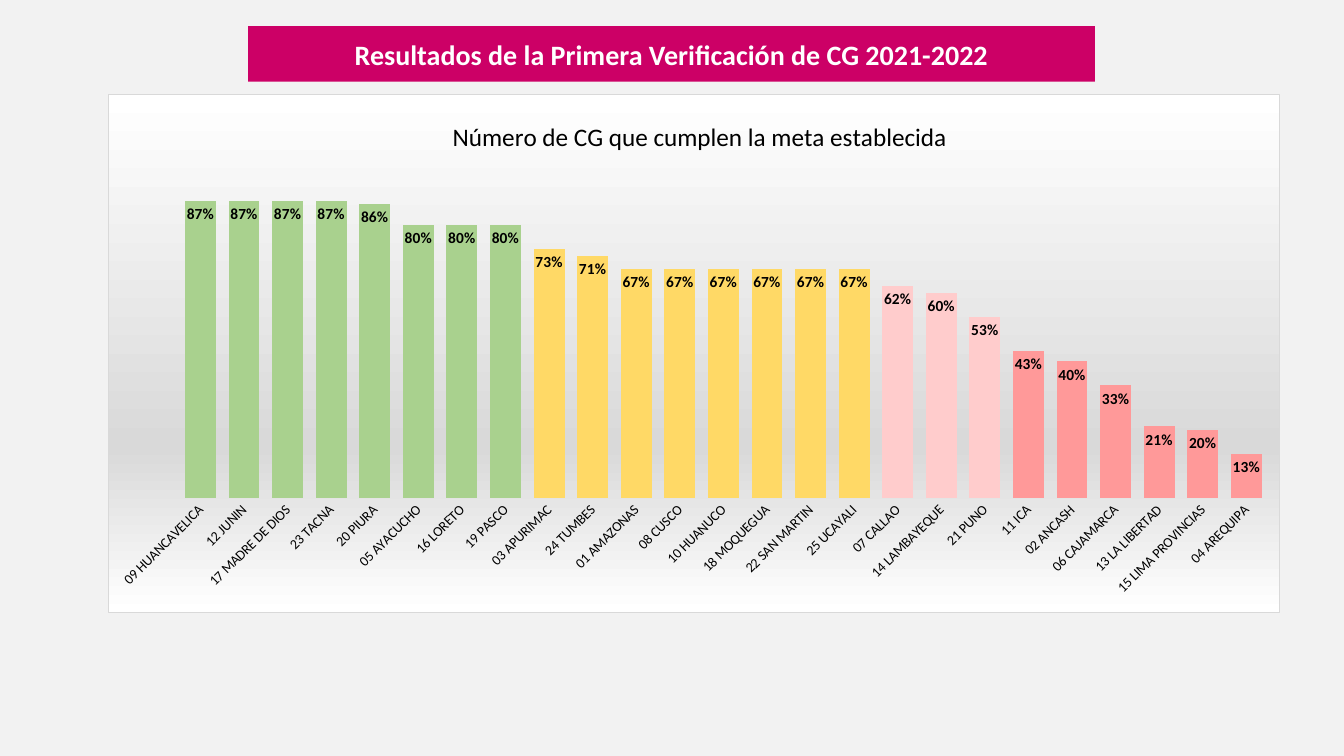
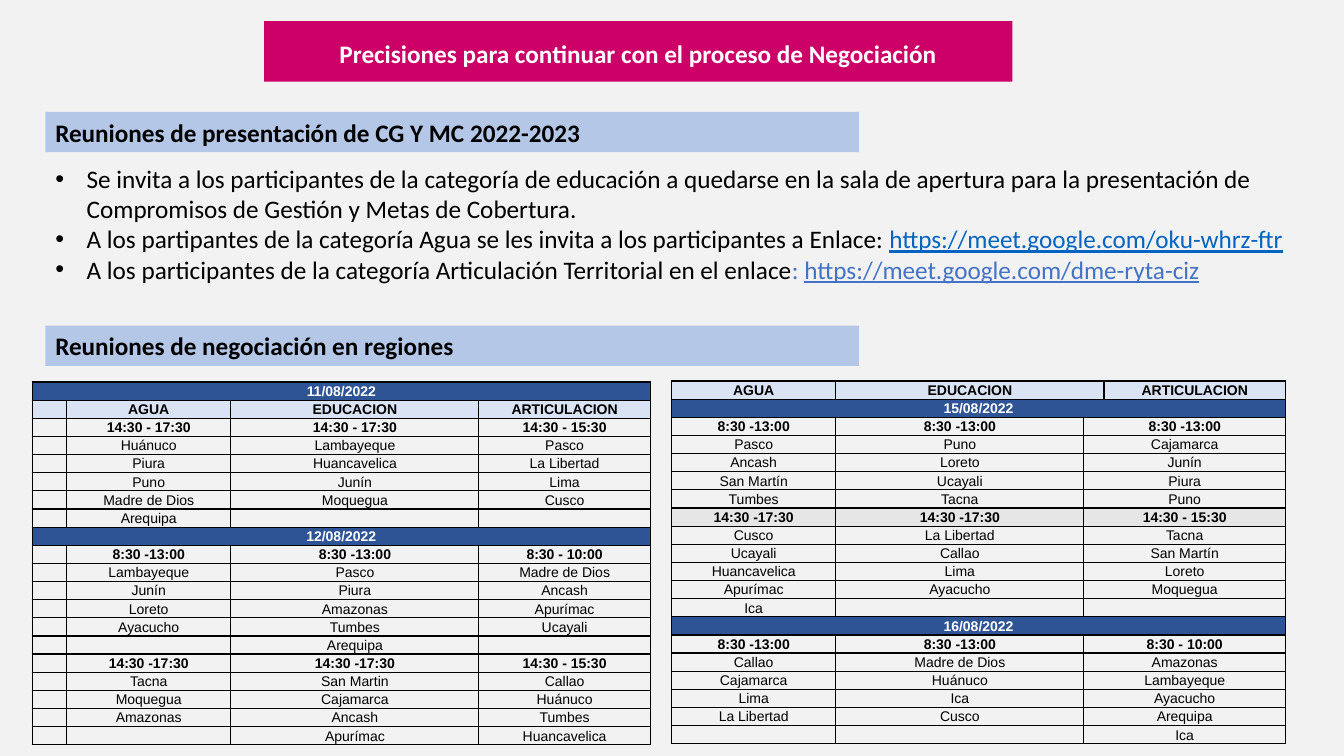
from lxml import etree
from pptx import Presentation
from pptx.chart.data import CategoryChartData
from pptx.dml.color import RGBColor
from pptx.enum.chart import XL_CHART_TYPE, XL_LABEL_POSITION, XL_TICK_MARK
from pptx.enum.shapes import MSO_SHAPE
from pptx.enum.text import MSO_ANCHOR, MSO_AUTO_SIZE, PP_ALIGN
from pptx.oxml import parse_xml
from pptx.oxml.ns import nsdecls, qn
from pptx.util import Inches, Pt

COLUMN = XL_CHART_TYPE.COLUMN_CLUSTERED
INSIDE = XL_LABEL_POSITION.INSIDE_END
NO_TICK = XL_TICK_MARK.NONE
RECT = MSO_SHAPE.RECTANGLE
MIDDLE, TOP = MSO_ANCHOR.MIDDLE, MSO_ANCHOR.TOP
FIXED = MSO_AUTO_SIZE.NONE
LEFT, CENTER = PP_ALIGN.LEFT, PP_ALIGN.CENTER

# Shared colours
PAPER, PINK, SKY = "F2F2F2", "CC0066", "B4C7E7"
NAVY, PALE, GRAY = "2F5496", "DAE3F3", "E7E6E6"
BLACK, WHITE, LINK, BLUE = "000000", "FFFFFF", "0563C1", "4472C4"
GREEN, YELLOW, ROSE, RED = "A9D18E", "FFD966", "FFCCCC", "FF9999"

# Shared text formats
TEXT = dict(name="Calibri", size=Pt(18), color=BLACK)
HEAD = dict(TEXT, bold=True)
CELL = dict(TEXT, name="Arial", size=Pt(10))
ROW = 0.18


def rgb(code):
    return RGBColor.from_string(code)


def put(item, **values):
    for key, value in values.items():
        if key == "color":
            item.color.rgb = rgb(value)
        else:
            setattr(item, key, value)


def place(item, box):
    sides = zip(("left", "top", "width", "height"), box)
    put(item, **{key: Inches(size) for key, size in sides})


def paint(item, color):
    item.fill.solid()
    item.fill.fore_color.rgb = rgb(color)


def layout(node, inner=False, **parts):
    """Give a chart part a place, in shares of the chart."""
    for old in node.findall(qn("c:layout")):
        node.remove(old)
    target = '<c:layoutTarget val="inner"/>' if inner else ""
    modes = "".join(f'<c:{key}Mode val="edge"/>' for key in "xy")
    sizes = "".join(f'<c:{key} val="{val}"/>' for key, val in parts.items())
    new = parse_xml(f'<c:layout {nsdecls("c")}><c:manualLayout>{target}'
                    f'{modes}{sizes}</c:manualLayout></c:layout>')
    text = node.find(qn("c:tx"))
    if text is None:
        node.insert(0, new)
    else:
        text.addnext(new)


def border(cell):
    props = cell._tc.get_or_add_tcPr()
    for spot, side in enumerate(("lnL", "lnR", "lnT", "lnB")):
        props.insert(spot, parse_xml(
            f'<a:{side} {nsdecls("a")} w="12700"><a:solidFill>'
            f'<a:srgbClr val="{BLACK}"/></a:solidFill></a:{side}>'))


class Deck:
    def __init__(self):
        self.prs = Presentation()
        put(self.prs, slide_width=Inches(13.33), slide_height=Inches(7.5))
        paint(self.prs.slide_master.background, PAPER)
        self.slide = None

    def add(self, kind):
        layouts = self.prs.slide_layouts
        self.slide = self.prs.slides.add_slide(layouts[kind])

    def text(self, par, words, style, align=LEFT, gap=1.0):
        put(par, alignment=align, line_spacing=gap)
        run = par.add_run()
        run.text = words
        put(run.font, **style)

    def title(self, words, box, size, gap=1.0):
        shape = self.slide.shapes.title
        place(shape, box)
        paint(shape, PINK)
        frame = shape.text_frame
        put(frame, auto_size=FIXED, vertical_anchor=MIDDLE, word_wrap=True)
        style = dict(HEAD, size=Pt(size), color=WHITE)
        self.text(frame.paragraphs[0], words, style, CENTER, gap)

    def band(self, words, top):
        shape = self.slide.shapes.add_shape(RECT, 0, 0, 0, 0)
        place(shape, (0.45, top, 8.07, 0.4))
        shape.shadow.inherit = False
        paint(shape, SKY)
        shape.line.fill.background()
        put(shape.text_frame, word_wrap=True, vertical_anchor=MIDDLE)
        self.text(shape.text_frame.paragraphs[0], words, HEAD)

    def list(self, items, box):
        shape = self.slide.placeholders[1]
        place(shape, box)
        frame = shape.text_frame
        put(frame, auto_size=FIXED, vertical_anchor=TOP, word_wrap=True)
        for spot, runs in enumerate(items):
            par = frame.add_paragraph() if spot else frame.paragraphs[0]
            props = par._p.get_or_add_pPr()
            props.set("marL", str(Inches(0.31)))
            props.set("indent", str(-Inches(0.31)))
            par.space_before = Pt(0)
            for words, extra in runs:
                self.text(par, words, {**TEXT, **extra})

    def cell(self, cell, words, fill, style):
        put(cell, margin_left=Inches(0.07), margin_right=Inches(0.07),
            margin_top=0, margin_bottom=0, vertical_anchor=MIDDLE)
        if fill:
            paint(cell, fill)
        else:
            cell.fill.background()
        border(cell)
        par = cell.text_frame.paragraphs[0]
        if words:
            self.text(par, words, style, CENTER, 1.07)
        else:
            par._p.get_or_add_endParaRPr().set("sz", "1000")

    def table(self, lines, left, top, widths, spans, late=None):
        """spans(head) gives the first and last column of each entry."""
        frame = self.slide.shapes.add_table(
            len(lines), len(widths), Inches(left), Inches(top),
            Inches(sum(widths)), Inches(ROW * len(lines)))
        table = frame.table
        put(table, first_row=False, horz_banding=False)
        for col, width in zip(table.columns, widths):
            col.width = Inches(width)
        for spot, line in enumerate(lines):
            table.rows[spot].height = Inches(ROW)
            words = line.split("|")
            head, day = line.startswith("AGUA"), len(words) == 1
            time = ":" in line
            fill = (NAVY if day else PALE if head
                    else late if line.startswith("14:30") else None)
            style = dict(CELL, bold=day or head or time,
                         color=WHITE if day else BLACK)
            areas = [(0, len(widths) - 1)] if day else spans(head)
            texts = {a[0]: w for a, w in zip(areas[::-1], words[::-1])}
            for first, last in areas:
                if last > first:
                    table.cell(spot, first).merge(table.cell(spot, last))
            for col in range(len(widths)):
                self.cell(table.cell(spot, col), texts.get(col, ""),
                          fill, style)

    def chart(self, title, groups, box):
        # Data
        data = CategoryChartData(number_format="0%")
        points = [p for group in groups.values() for p in group]
        data.categories = [name for name, _ in points]
        data.add_series("Series 1", [rate / 100 for _, rate in points])
        frame = self.slide.shapes.add_chart(COLUMN, 0, 0, 0, 0, data)
        place(frame, box)
        chart = frame.chart
        chart.has_legend = False
        put(chart.font, **dict(TEXT, size=Pt(10)))

        # Title
        chart.has_title = True
        head = chart.chart_title
        self.text(head.text_frame.paragraphs[0], title,
                  dict(TEXT, bold=False), CENTER)
        layout(head._element, x=0.29, y=0.04)

        # Axes
        rates, names = chart.value_axis, chart.category_axis
        put(rates, visible=False, has_major_gridlines=False,
            minimum_scale=0, maximum_scale=1)
        put(names, major_tick_mark=NO_TICK, minor_tick_mark=NO_TICK)
        names.format.line.fill.background()
        put(names.tick_labels.font, **dict(TEXT, size=Pt(10)))
        turn = names._element.find(qn("c:txPr")).find(qn("a:bodyPr"))
        turn.set("rot", "-2700000")
        turn.set("vert", "horz")

        # Columns and labels
        plot = chart.plots[0]
        put(plot, gap_width=41, vary_by_categories=False,
            has_data_labels=True)
        put(plot.data_labels, show_value=True, position=INSIDE,
            number_format="0%", number_format_is_linked=False)
        put(plot.data_labels.font, **dict(HEAD, size=Pt(11)))
        series = plot.series[0]
        paint(series.format, RED)
        colors = [c for c, group in groups.items() for _ in group]
        for spot, color in enumerate(colors):
            if color != RED:
                paint(series.points[spot].format, color)

        # Plot area and backdrop
        root = chart._chartSpace
        body = root.find(qn("c:chart"))
        layout(body.find(qn("c:plotArea")), True,
               x=0.06, y=0.12, w=0.93, h=0.66)
        props = etree.Element(qn("c:spPr"))
        stops = "".join(
            f'<a:gs pos="{pos}000"><a:srgbClr val="{color}"/></a:gs>'
            for pos, color in ((0, WHITE), (68, "D9D9D9"), (100, WHITE)))
        props.append(parse_xml(
            f'<a:gradFill {nsdecls("a")}><a:gsLst>{stops}</a:gsLst>'
            '<a:lin ang="5400000" scaled="0"/></a:gradFill>'))
        props.append(parse_xml(
            f'<a:ln {nsdecls("a")} w="9525"><a:solidFill>'
            '<a:srgbClr val="D9D9D9"/></a:solidFill></a:ln>'))
        body.addnext(props)


RATES = {
    GREEN: [("09 HUANCAVELICA", 87), ("12 JUNIN", 87),
            ("17 MADRE DE DIOS", 87), ("23 TACNA", 87), ("20 PIURA", 86),
            ("05 AYACUCHO", 80), ("16 LORETO", 80), ("19 PASCO", 80)],
    YELLOW: [("03 APURIMAC", 73), ("24 TUMBES", 71), ("01 AMAZONAS", 67),
             ("08 CUSCO", 67), ("10 HUANUCO", 67), ("18 MOQUEGUA", 67),
             ("22 SAN MARTIN", 67), ("25 UCAYALI", 67)],
    ROSE: [("07 CALLAO", 62), ("14 LAMBAYEQUE", 60), ("21 PUNO", 53)],
    RED: [("11 ICA", 43), ("02 ANCASH", 40), ("06 CAJAMARCA", 33),
          ("13 LA LIBERTAD", 21), ("15 LIMA PROVINCIAS", 20),
          ("04 AREQUIPA", 13)],
}

NOTES = [
    [("Se invita a los participantes de la categoría de educación a quedarse "
      "en la sala de apertura para la presentación de Compromisos de Gestión "
      "y Metas de Cobertura.", {})],
    [("A los partipantes de la categoría Agua se les invita a los "
      "participantes a Enlace: ", {}),
     ("https://meet.google.com/oku-whrz-ftr",
      dict(color=LINK, underline=True))],
    [("A los participantes de la categoría Articulación Territorial en el "
      "enlace", {}), (": ", dict(color=BLUE)),
     ("https://meet.google.com/dme-ryta-ciz",
      dict(color=BLUE, underline=True))],
]

EARLY = """11/08/2022
AGUA|EDUCACION|ARTICULACION
14:30 - 17:30|14:30 - 17:30|14:30 - 15:30
Huánuco|Lambayeque|Pasco
Piura|Huancavelica|La Libertad
Puno|Junín|Lima
Madre de Dios|Moquegua|Cusco
Arequipa||
12/08/2022
8:30 -13:00|8:30 -13:00|8:30 - 10:00
Lambayeque|Pasco|Madre de Dios
Junín|Piura|Ancash
Loreto|Amazonas|Apurímac
Ayacucho|Tumbes|Ucayali
|Arequipa|
14:30 -17:30|14:30 -17:30|14:30 - 15:30
Tacna|San Martin|Callao
Moquegua|Cajamarca|Huánuco
Amazonas|Ancash|Tumbes
|Apurímac|Huancavelica""".split("\n")

LATER = """AGUA|EDUCACION|ARTICULACION
15/08/2022
8:30 -13:00|8:30 -13:00|8:30 -13:00
Pasco|Puno|Cajamarca
Ancash|Loreto|Junín
San Martín|Ucayali|Piura
Tumbes|Tacna|Puno
14:30 -17:30|14:30 -17:30|14:30 - 15:30
Cusco|La Libertad|Tacna
Ucayali|Callao|San Martín
Huancavelica|Lima|Loreto
Apurímac|Ayacucho|Moquegua
Ica||
16/08/2022
8:30 -13:00|8:30 -13:00|8:30 - 10:00
Callao|Madre de Dios|Amazonas
Cajamarca|Huánuco|Lambayeque
Lima|Ica|Ayacucho
La Libertad|Cusco|Arequipa
||Ica""".split("\n")


def main():
    deck = Deck()

    # Results by region
    deck.add(5)
    deck.title("Resultados de la Primera Verificación de CG 2021-2022",
               (2.46, 0.26, 8.4, 0.55), 20)
    deck.chart("Número de CG que cumplen la meta establecida", RATES,
               (1.07, 0.93, 11.63, 5.15))

    # Meetings and timetable
    deck.add(1)
    deck.title("Precisiones para continuar con el proceso de Negociación",
               (2.62, 0.21, 7.42, 0.6), 18, 1.15)
    deck.band("Reuniones de presentación de CG Y MC 2022-2023", 1.11)
    deck.list(NOTES, (0.45, 1.57, 12.58, 1.31))
    deck.band("Reuniones de negociación en regiones", 3.23)
    deck.table(LATER, 6.66, 3.78, (1.63, 2.46, 0.2, 1.8),
               lambda head: [(0, 0), (1, 2), (3, 3)] if head
               else [(0, 0), (1, 1), (2, 3)], GRAY)
    deck.table(EARLY, 0.32, 3.79, (0.34, 1.63, 2.46, 1.7),
               lambda head: [(col, col) for col in range(4)])
    deck.prs.save("out.pptx")


if __name__ == "__main__":
    main()
